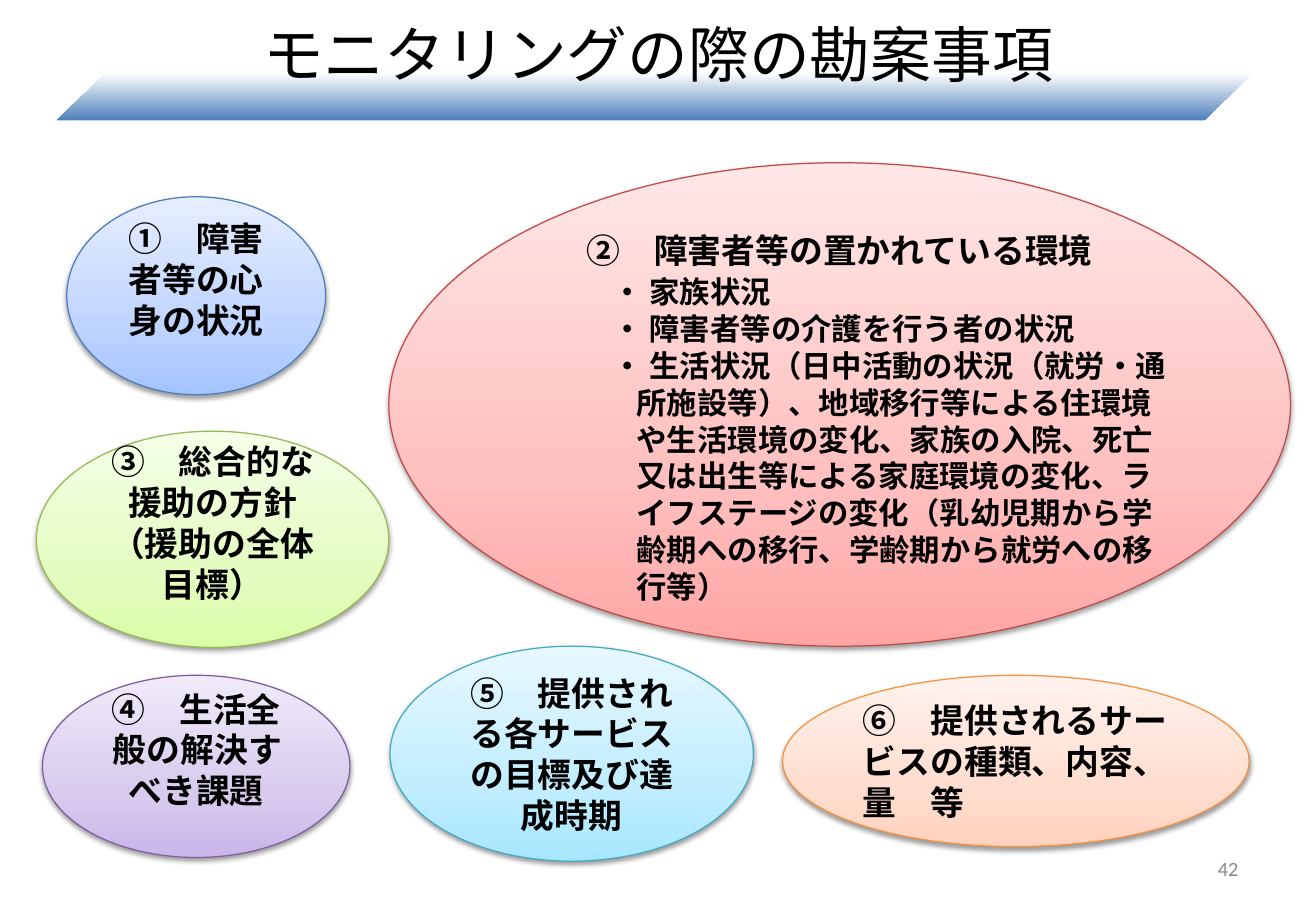
from lxml import etree
from pptx import Presentation
from pptx.dml.color import RGBColor
from pptx.enum.shapes import MSO_SHAPE
from pptx.enum.text import MSO_ANCHOR, PP_ALIGN
from pptx.oxml.ns import qn
from pptx.util import Emu, Pt

PX = 9144
ELLIPSE, PARALLELOGRAM = MSO_SHAPE.OVAL, MSO_SHAPE.PARALLELOGRAM
TOP, MIDDLE = MSO_ANCHOR.TOP, MSO_ANCHOR.MIDDLE
LEFT, CENTER, RIGHT = PP_ALIGN.LEFT, PP_ALIGN.CENTER, PP_ALIGN.RIGHT
JP = "Noto Sans CJK JP"

COLORS = {
    "black": "000000", "grey": "898989",
    "band": ("FFFFFF", "4F81BD"),
    "blue": ("A4C4FF", "BFD4FF", "E6EEFF"), "blue_line": "4B7EBC",
    "red": ("FFA6A5", "FFC0BF", "FFE7E7"), "red_line": "BF4C48",
    "green": ("DAFDA7", "E4FCC2", "F5FFE7"), "green_line": "98B955",
    "purple": ("C9B5E8", "D8CBEE", "F0EAF9"), "purple_line": "7D60A0",
    "aqua": ("A7E6FF", "C1EDFF", "E7F8FF"), "aqua_line": "46AAC5",
    "orange": ("FFD2BD", "FFDED0", "FFF2ED"), "orange_line": "F69240",
}

TITLE = {"size": Pt(36), "bold": False, "name": JP}
TOPIC = {"size": Pt(20), "bold": True, "name": "Arial"}
DETAIL = {"size": Pt(18), "bold": True, "name": JP}
NUMBER = {"size": Pt(12), "bold": False, "name": "Calibri"}

TOPICS = [
    ((55, 162, 213, 163), "blue", CENTER, 33, "①　障害者等の心身の状況"),
    ((320, 134, 742, 398), "red", CENTER, 260, "②　障害者等の置かれている環境"),
    ((30, 355, 290, 178), "green", CENTER, 33, "③　総合的な援助の方針（援助の全体目標）"),
    ((35, 556, 253, 150), "purple", CENTER, 33, "④　生活全般の解決すべき課題"),
    ((321, 532, 299, 177), "aqua", CENTER, 5, "⑤　提供される各サービスの目標及び達成時期"),
    ((644, 556, 384, 141), "orange", LEFT, 5, "⑥　提供されるサービスの種類、内容、量　等"),
]

DETAILS = [
    "・ 家族状況",
    "・ 障害者等の介護を行う者の状況",
    "・ 生活状況（日中活動の状況（就労・通所施設等）、地域移行等による住環境や"
    "生活環境の変化、家族の入院、死亡又は出生等による家庭環境の変化、ライフステージの変化"
    "（乳幼児期から学齢期への移行、学齢期から就労への移行等）",
]


def emu(*lengths):
    """Turn px lengths into EMU."""
    return [Emu(n * PX) for n in lengths]


def set_gradient(sp, colors, angle):
    """Fill a shape with a linear gradient of two or three colours."""
    sp.fill.gradient()
    sp.fill.gradient_angle = angle
    stops = sp._element.spPr.find(qn("a:gradFill")).find(qn("a:gsLst"))
    for stop in list(stops):
        stops.remove(stop)
    places = (0, 35, 100) if len(colors) == 3 else (0, 100)
    for place, color in zip(places, colors):
        gs = etree.SubElement(stops, qn("a:gs"), pos=str(place * 1000))
        etree.SubElement(gs, qn("a:srgbClr"), val=color)


def add_shadow(sp):
    """Give a shape a soft shadow below it."""
    effects = sp._element.spPr.find(qn("a:effectLst"))
    shadow = etree.SubElement(effects, qn("a:outerShdw"), blurRad=str(Pt(3.1)),
                              dist=str(Pt(1.6)), dir="5400000", rotWithShape="0")
    color = etree.SubElement(shadow, qn("a:srgbClr"), val=COLORS["black"])
    etree.SubElement(color, qn("a:alpha"), val="38000")


def write_text(sp, lines, style, align, anchor=MIDDLE, color="black", bottom=5):
    """Write styled paragraphs into a shape and return them."""
    tf = sp.text_frame
    tf.word_wrap = True
    tf.vertical_anchor = anchor
    tf.margin_left, tf.margin_top, tf.margin_right, tf.margin_bottom = emu(10, 5, 10, bottom)
    for i, line in enumerate(lines):
        p = tf.add_paragraph() if i else tf.paragraphs[0]
        p.alignment = align
        p.line_spacing = Pt(round(style["size"].pt * 1.21, 1))
        r = p.add_run()
        r.text = line
        for key, value in style.items():
            setattr(r.font, key, value)
        r.font.color.rgb = RGBColor.from_string(COLORS[color])
        etree.SubElement(r.font._element, qn("a:ea"), typeface=JP)
    return tf.paragraphs


def add_band(s):
    """Draw the slanted band under the title."""
    sp = s.shapes.add_shape(PARALLELOGRAM, *emu(47, 60, 984, 39))
    sp.adjustments[0] = 1.025
    sp.shadow.inherit = False
    sp.line.fill.background()
    set_gradient(sp, COLORS["band"], 270)


def add_topic(s, box, color, align, bottom, text):
    """Draw one numbered topic ellipse."""
    sp = s.shapes.add_shape(ELLIPSE, *emu(*box))
    sp.shadow.inherit = False
    set_gradient(sp, COLORS[color], 90)
    sp.line.color.rgb = RGBColor.from_string(COLORS[color + "_line"])
    sp.line.width = Pt(0.75)
    add_shadow(sp)
    write_text(sp, [text], TOPIC, align, bottom=bottom)


def add_text(s, box, *args, **options):
    """Add a text box and return its paragraphs."""
    return write_text(s.shapes.add_textbox(*emu(*box)), *args, **options)


def main():
    """Build the slide and save it."""
    prs = Presentation()
    prs.slide_width, prs.slide_height = emu(1083, 750)
    s = prs.slides.add_slide(prs.slide_layouts[6])
    add_band(s)
    add_text(s, (54, 0, 975, 87), ["モニタリングの際の勘案事項"], TITLE, CENTER)
    for topic in TOPICS:
        add_topic(s, *topic)
    details = add_text(s, (494, 220, 488, 252), DETAILS, DETAIL, LEFT, anchor=TOP)
    pPr = details[-1]._p.get_or_add_pPr()
    pPr.set("marL", str(20 * PX))
    pPr.set("indent", str(-20 * PX))
    add_text(s, (776, 695, 253, 40), ["42"], NUMBER, RIGHT, color="grey")
    prs.save("out.pptx")


if __name__ == "__main__":
    main()
